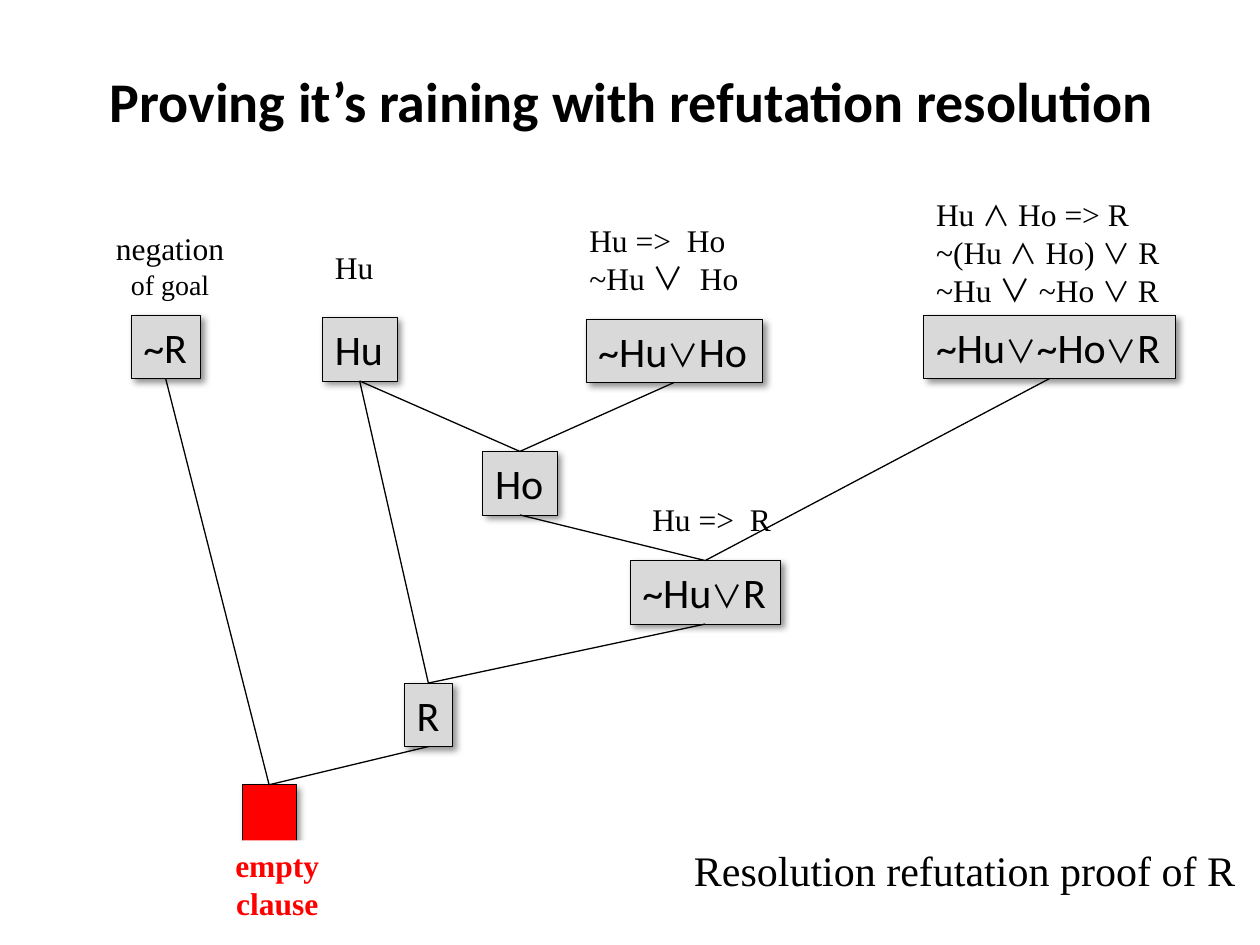
from lxml.etree import SubElement
from pptx import Presentation
from pptx.dml.color import RGBColor
from pptx.enum.shapes import MSO_CONNECTOR as Connector, MSO_SHAPE as Shape
from pptx.enum.text import MSO_ANCHOR as Anchor, MSO_AUTO_SIZE as AutoSize, PP_ALIGN as Align
from pptx.oxml.ns import qn
from pptx.util import Cm, Pt

COLORS = {"ink": "000000", "clause": "D9D9D9", "empty": "FF0000", "paper": "FFFFFF"}
SERIF, SANS, SYMBOL = "Times New Roman", "Calibri", "Noto Sans CJK JP"
BOX_HEIGHT = 1.28
TOP, BOTTOM = 0, 2

OR_BOX = ("∨", 18)
AND, OR, BIG_OR = ("∧", 16), ("∨", 16), ("∨", 18)

CLAUSES = {
    "not R": (2.64, 6.35, 1.4, ["~R"]),
    "Hu": (6.5, 6.4, 1.5, ["Hu"]),
    "Hu to Ho": (11.81, 6.43, 3.56, ["~Hu", OR_BOX, "Ho"]),
    "rule": (18.62, 6.35, 5.08, ["~Hu", OR_BOX, "~Ho", OR_BOX, "R"]),
    "Ho": (9.73, 9.1, 1.5, ["Ho"]),
    "Hu to R": (12.7, 11.3, 3.03, ["~Hu", OR_BOX, "R"]),
    "R": (8.15, 13.77, 0.97, ["R"]),
    "empty": (4.88, 15.82, 1.09, []),
}
RESOLUTIONS = [
    ("Hu", "Hu to Ho", "Ho"),
    ("rule", "Ho", "Hu to R"),
    ("Hu to R", "Hu", "R"),
    ("not R", "R", "empty"),
]
LABELS = [
    ((11.63, 4.34, 3.56, 1.8), [["Hu =>  Ho"], ["~Hu ", BIG_OR, "  Ho"]], {}),
    ((18.62, 3.81, 5.97, 2.57), [
        ["Hu ", AND, " Ho => R"],
        ["~(Hu ", AND, " Ho) ", OR, " R"],
        ["~Hu ", BIG_OR, " ~Ho ", OR, " R"],
    ], {"wrap": True}),
    ((6.5, 4.88, 1.3, 1.02), [["Hu"]], {}),
    ((12.9, 9.96, 2.97, 1.02), [["Hu =>  R"]], {}),
    ((13.74, 16.89, 11.73, 1.27), [["Resolution refutation proof of R"]], {"size": 24}),
    ((1.98, 4.5, 2.9, 1.7), [["negation", (" of goal", 16)]],
     {"wrap": True, "align": Align.CENTER}),
    ((4.14, 16.94, 2.9, 1.8), [["empty"], ["clause"]],
     {"wrap": True, "align": Align.CENTER, "color": "empty", "bold": True, "fill": "paper"}),
]


def rgb(name):
    return RGBColor.from_string(COLORS[name])


def apply(target, values):
    for name, value in values.items():
        setattr(target, name, value)


def paint(fill, color):
    fill.solid()
    fill.fore_color.rgb = rgb(color)


def add_span(para, text, font, size, color="ink", bold=False):
    span = para.add_run()
    span.text = text
    apply(span.font, {"name": font, "size": Pt(size), "bold": bold})
    span.font.color.rgb = rgb(color)
    if font == SYMBOL:
        SubElement(span.font._element, qn("a:ea"), typeface=SYMBOL)


def write(frame, lines, font, size, align=Align.LEFT, wrap=False, color="ink", bold=False):
    apply(frame, {"word_wrap": wrap, "auto_size": AutoSize.SHAPE_TO_FIT_TEXT,
                  "vertical_anchor": Anchor.TOP})
    for index, line in enumerate(lines):
        para = frame.add_paragraph() if index else frame.paragraphs[0]
        para.alignment = align
        for piece in line:
            text, points = (piece, size) if isinstance(piece, str) else piece
            add_span(para, text, SYMBOL if text in "∧∨" else font, points, color, bold)


def add_shadow(shape):
    effects = SubElement(shape._element.spPr, qn("a:effectLst"))
    shadow = SubElement(effects, qn("a:outerShdw"), blurRad=str(Pt(4)), dist=str(Pt(3)),
                        dir=str(45 * 60000), algn="tl", rotWithShape="0")
    ink = SubElement(shadow, qn("a:srgbClr"), val=COLORS["ink"])
    SubElement(ink, qn("a:alpha"), val="43000")


def add_clause(page, left, top, width, pieces):
    box = page.shapes.add_shape(Shape.RECTANGLE, Cm(left), Cm(top), Cm(width), Cm(BOX_HEIGHT))
    paint(box.fill, "clause" if pieces else "empty")
    paint(box.line.fill, "ink")
    box.line.width = Pt(0.25)
    add_shadow(box)
    if pieces:
        write(box.text_frame, [pieces], SANS, 24)
    return box


def add_link(page, parent, child):
    link = page.shapes.add_connector(Connector.STRAIGHT, 0, 0, 0, 0)
    link.begin_connect(parent, BOTTOM)
    link.end_connect(child, TOP)
    paint(link.line.fill, "ink")
    link.line.width = Pt(0.75)
    SubElement(link._element.spPr, qn("a:effectLst"))


def add_label(page, place, lines, size=18, fill=None, **style):
    box = page.shapes.add_textbox(*map(Cm, place))
    if fill:
        paint(box.fill, fill)
    write(box.text_frame, lines, SERIF, size, **style)


def add_title(page, text):
    title = page.shapes.title
    apply(title, {"left": Cm(0), "top": Cm(0.43), "width": Cm(25.48), "height": Cm(3.18)})
    write(title.text_frame, [[text]], SANS, 32, Align.CENTER, wrap=True, bold=True)
    apply(title.text_frame, {"auto_size": AutoSize.NONE, "vertical_anchor": Anchor.MIDDLE})


def main():
    deck = Presentation()
    apply(deck, {"slide_width": Cm(25.4), "slide_height": Cm(19.05)})
    page = deck.slides.add_slide(deck.slide_layouts[5])
    paint(page.background.fill, "paper")
    add_title(page, "Proving it’s raining with refutation resolution")
    boxes = {name: add_clause(page, *clause) for name, clause in CLAUSES.items()}
    for *parents, child in RESOLUTIONS:
        for parent in parents:
            add_link(page, boxes[parent], boxes[child])
    for place, lines, style in LABELS:
        add_label(page, place, lines, **style)
    deck.save("out.pptx")


if __name__ == "__main__":
    main()
